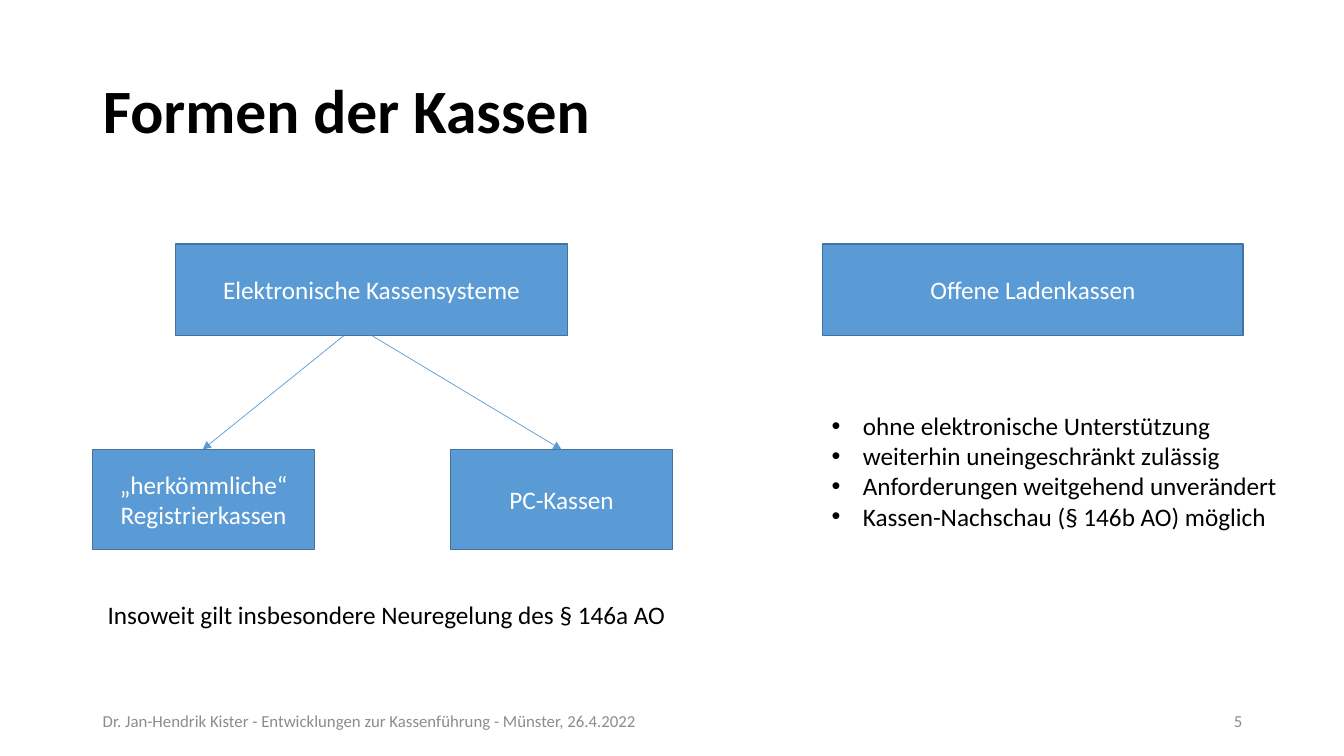
"""Build the slide on the forms of cash registers."""
from dataclasses import dataclass

from lxml.etree import SubElement
from pptx import Presentation
from pptx.dml.color import RGBColor as Color
from pptx.enum.shapes import MSO_CONNECTOR as Connector, MSO_SHAPE as Preset
from pptx.enum.text import MSO_ANCHOR as Anchor, PP_ALIGN as Align
from pptx.oxml.ns import qn
from pptx.util import Inches, Pt


@dataclass(frozen=True)
class Theme:
    font: str = "Calibri"
    title_size: int = 44
    body_size: int = 18
    footer_size: int = 12
    black: str = "000000"
    white: str = "FFFFFF"
    grey: str = "8C8C8C"
    blue: str = "5B9BD5"
    border: str = "43739E"


theme = Theme()


def write_text(shape, text, size=theme.body_size, color=theme.black, bold=False,
               align=Align.LEFT, anchor=Anchor.MIDDLE, spacing=1.0, bullet=False):
    """Fill a shape with one paragraph per line of text."""
    frame = shape.text_frame
    frame.text = text
    frame.word_wrap = True
    frame.vertical_anchor = anchor
    for paragraph in frame.paragraphs:
        paragraph.alignment = align
        paragraph.line_spacing = spacing
        font = paragraph.runs[0].font
        font.name, font.size, font.bold = theme.font, Pt(size), bold
        font.color.rgb = Color.from_string(color)
        if bullet:
            properties = paragraph._p.get_or_add_pPr()
            properties.set("marL", str(Inches(0.31)))
            properties.set("indent", str(Inches(-0.31)))
            SubElement(properties, qn("a:buFont")).set("typeface", "Arial")
            SubElement(properties, qn("a:buChar")).set("char", "•")


presentation = Presentation()
presentation.slide_width = Inches(13.33)
presentation.slide_height = Inches(7.5)
slide = presentation.slides.add_slide(presentation.slide_layouts[5])

title = slide.shapes.title
title.left, title.top = Inches(0.92), Inches(0.4)
title.width, title.height = Inches(11.5), Inches(1.45)
write_text(title, "Formen der Kassen", size=theme.title_size, bold=True, spacing=0.9)

boxes = [
    ("Elektronische Kassensysteme", 1.74, 2.42, 3.89, 0.91),
    ("„herkömmliche“ Registrierkassen", 0.92, 4.46, 2.2, 0.99),
    ("PC-Kassen", 4.47, 4.46, 2.2, 0.99),
    ("Offene Ladenkassen", 8.16, 2.42, 4.17, 0.91),
]
for text, *place in boxes:
    box = slide.shapes.add_shape(Preset.RECTANGLE, *map(Inches, place))
    box.shadow.inherit = False
    box.fill.solid()
    box.fill.fore_color.rgb = Color.from_string(theme.blue)
    box.line.color.rgb = Color.from_string(theme.border)
    box.line.width = Pt(1)
    write_text(box, text, color=theme.white, align=Align.CENTER)

for start, end in [(3.41, 2.01), (3.69, 5.57)]:
    arrow = slide.shapes.add_connector(
        Connector.STRAIGHT, Inches(start), Inches(3.33), Inches(end), Inches(4.46))
    arrow.line.color.rgb = Color.from_string(theme.blue)
    arrow.line.width = Pt(0.5)
    SubElement(arrow.line._get_or_add_ln(), qn("a:tailEnd")).set("type", "triangle")
    SubElement(arrow._element.spPr, qn("a:effectLst"))

features = "\n".join([
    "ohne elektronische Unterstützung",
    "weiterhin uneingeschränkt zulässig",
    "Anforderungen weitgehend unverändert",
    "Kassen-Nachschau (§ 146b AO) möglich",
])
footer = {"size": theme.footer_size, "color": theme.grey}
notes = [
    ("Insoweit gilt insbesondere Neuregelung des § 146a AO",
     (0.97, 5.9, 5.8, 0.4), {"anchor": Anchor.TOP}),
    (features, (8.15, 4.02, 4.67, 1.31), {"anchor": Anchor.TOP, "bullet": True}),
    ("Dr. Jan-Hendrik Kister - Entwicklungen zur Kassenführung - Münster, 26.4.2022",
     (0.92, 6.95, 5.75, 0.4), footer),
    ("5", (9.42, 6.95, 3, 0.4), {**footer, "align": Align.RIGHT}),
]
for text, place, style in notes:
    write_text(slide.shapes.add_textbox(*map(Inches, place)), text, **style)

presentation.save("out.pptx")
